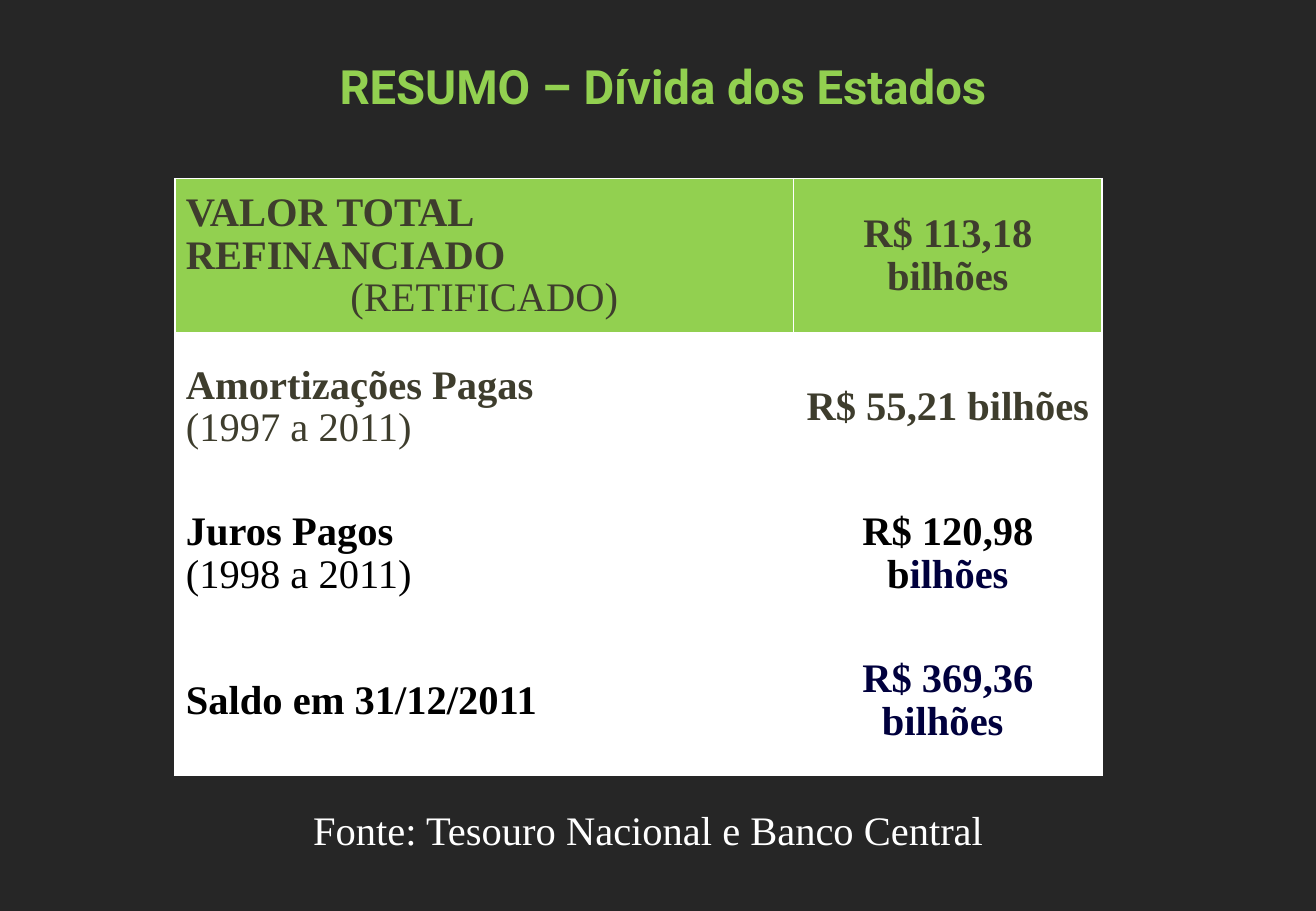
from dataclasses import dataclass

from lxml.etree import SubElement
from pptx import Presentation
from pptx.dml.color import RGBColor
from pptx.enum.text import MSO_ANCHOR, PP_ALIGN
from pptx.oxml.ns import qn
from pptx.util import Inches, Pt


@dataclass(frozen=True)
class Theme:
    background: str = "262626"
    green: str = "92D050"
    white: str = "FFFFFF"
    olive: str = "3E3D2D"
    black: str = "000000"
    navy: str = "00003D"
    title_font: str = "Roboto"
    body_font: str = "Times New Roman"
    title_size: int = 28
    body_size: int = 24


theme = Theme()


def write(paragraph, text, color, font=theme.body_font, size=theme.body_size,
          bold=False, align=PP_ALIGN.CENTER, spacing=None):
    """Append a formatted run to the paragraph."""
    paragraph.alignment = align
    paragraph.line_spacing = spacing
    run = paragraph.add_run()
    run.text = text
    run.font.name = font
    run.font.size = Pt(size)
    run.font.bold = bold
    run.font.color.rgb = RGBColor.from_string(color)


def add_borders(cell, color, bottom_width):
    """Outline the cell at 1 pt, with its own width for the bottom edge."""
    properties = cell._tc.get_or_add_tcPr()
    for edge, width in (("L", 1), ("R", 1), ("T", 1), ("B", bottom_width)):
        line = SubElement(properties, qn(f"a:ln{edge}"), w=str(Pt(width)))
        fill = SubElement(line, qn("a:solidFill"))
        SubElement(fill, qn("a:srgbClr"), val=color)


presentation = Presentation()
presentation.slide_width = Inches(10.83)
presentation.slide_height = Inches(7.5)
slide = presentation.slides.add_slide(presentation.slide_layouts[6])
slide.background.fill.solid()
slide.background.fill.fore_color.rgb = RGBColor.from_string(theme.background)

# Title and source line
captions = [
    ("RESUMO – Dívida dos Estados", (0.61, 0.42, 9.69, 0.57),
     dict(color=theme.green, font=theme.title_font, size=theme.title_size, bold=True)),
    ("Fonte: Tesouro Nacional e Banco Central", (1.95, 6.58, 6.77, 0.5),
     dict(color=theme.white)),
]
for text, box, style in captions:
    frame = slide.shapes.add_textbox(*map(Inches, box)).text_frame
    frame.word_wrap = True
    write(frame.paragraphs[0], text, **style)

# Each row: label, detail, detail alignment, label colour, amount runs
debt_rows = [
    ("VALOR TOTAL REFINANCIADO", "(RETIFICADO)", PP_ALIGN.CENTER, theme.olive,
     [("R$ 113,18 bilhões", theme.olive)]),
    ("Amortizações Pagas", "(1997 a 2011)", PP_ALIGN.LEFT, theme.olive,
     [("R$ 55,21 bilhões", theme.olive)]),
    ("Juros Pagos", "(1998 a 2011)", PP_ALIGN.LEFT, theme.black,
     [("R$ 120,98 b", theme.black), ("ilhões", theme.navy)]),
    ("Saldo em 31/12/2011", None, None, theme.black,
     [("R$ 369,36 bilhões ", theme.navy)]),
]
header_height, row_height = 1.28, 1.21
table_height = header_height + row_height * (len(debt_rows) - 1)
table = slide.shapes.add_table(
    len(debt_rows), 2, Inches(1.44), Inches(1.47), Inches(7.63), Inches(table_height)
).table
table.columns[0].width = Inches(5.09)
table.columns[1].width = Inches(2.54)

for index, (label, detail, detail_align, color, amount) in enumerate(debt_rows):
    is_header = index == 0
    table.rows[index].height = Inches(header_height if is_header else row_height)
    label_cell, amount_cell = table.rows[index].cells
    for cell in (label_cell, amount_cell):
        add_borders(cell, theme.white, bottom_width=3 if is_header else 1)
        cell.fill.solid()
        cell.fill.fore_color.rgb = RGBColor.from_string(
            theme.green if is_header else theme.white)
        cell.vertical_anchor = MSO_ANCHOR.MIDDLE
        cell.margin_left = cell.margin_right = Inches(0.09)
        cell.margin_top = cell.margin_bottom = Inches(0.05)

    write(label_cell.text_frame.paragraphs[0], label, color,
          bold=True, align=PP_ALIGN.LEFT, spacing=0.95)
    if detail:
        write(label_cell.text_frame.add_paragraph(), detail, color,
              align=detail_align, spacing=0.95)
    for text, run_color in amount:
        write(amount_cell.text_frame.paragraphs[0], text, run_color,
              bold=True, spacing=0.95)

presentation.save("out.pptx")
